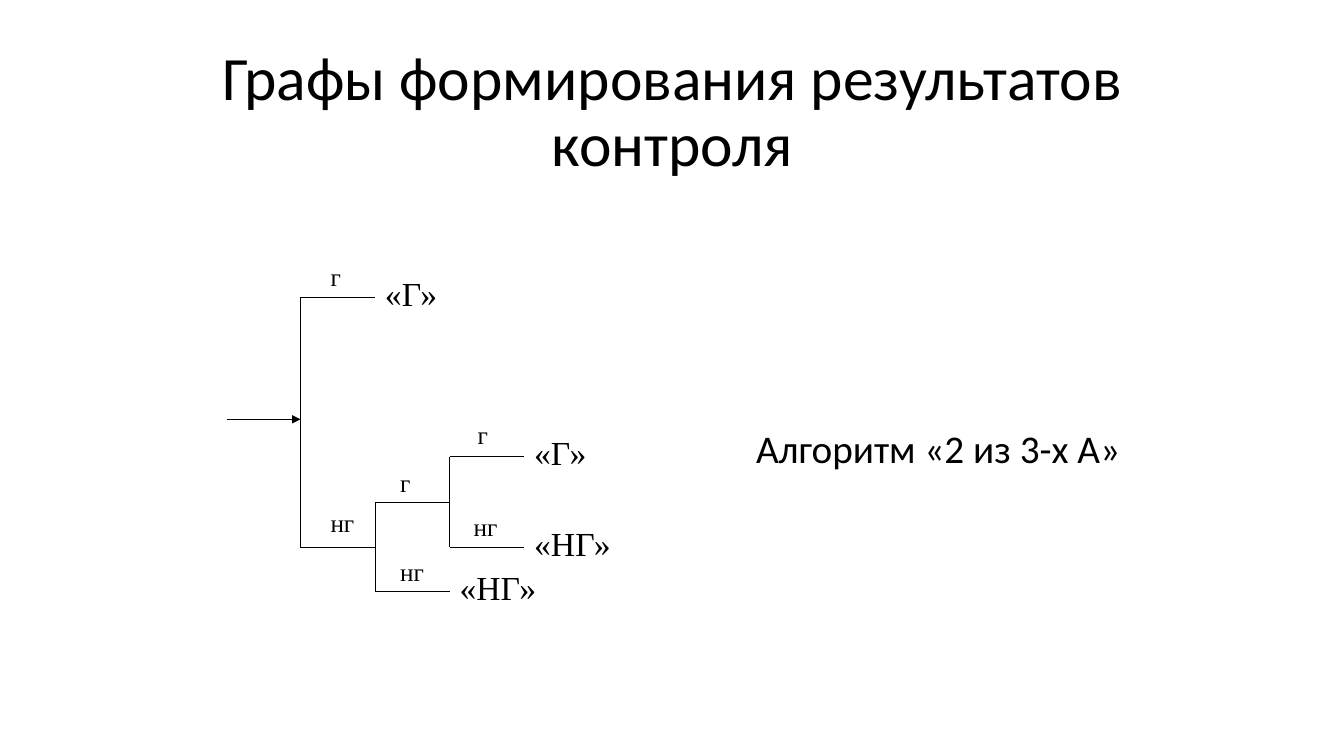
from dataclasses import dataclass

from pptx import Presentation
from pptx import util as u
from pptx.dml.color import RGBColor
from pptx.enum import shapes, text
from pptx.oxml import parse_xml
from pptx.oxml.ns import nsdecls, qn


@dataclass(frozen=True)
class Theme:
    ink: RGBColor = RGBColor(0, 0, 0)
    paper: RGBColor = RGBColor(255, 255, 255)
    sans: str = "Calibri"
    serif: str = "Times New Roman"
    title: int = 44
    note: int = 28
    leaf: int = 24
    mark: int = 18
    line: float = 0.5


THEME = Theme()
SCALE = 9144
STEP = 74
FORKS = [
    (298, 416, [(295, "г", 20, -41, "«Г»"), (543, "нг", 20, -45, "")]),
    (372, 543, [(498, "г", 15, -39, ""), (587, "нг", 15, -40, "«НГ»")]),
    (446, 498, [(453, "г", 18, -42, "«Г»"), (543, "нг", 14, -41, "«НГ»")]),
]


def px(n):
    return u.Emu(n * SCALE)


def style(par, size, face):
    par.font.size = u.Pt(size)
    par.font.name = face
    par.font.color.rgb = THEME.ink


def head(slide, words):
    title = slide.shapes.title
    title.left, title.top, title.width, title.height = map(px, (92, 40, 1150, 145))
    frame = title.text_frame
    frame.text = words
    frame.word_wrap = True
    frame.auto_size = text.MSO_AUTO_SIZE.NONE
    frame.vertical_anchor = text.MSO_ANCHOR.MIDDLE
    par = frame.paragraphs[0]
    par.alignment = text.PP_ALIGN.CENTER
    par.line_spacing = 0.9
    style(par, THEME.title, THEME.sans)


def label(slide, words, box, size, face):
    frame = slide.shapes.add_textbox(*map(px, box)).text_frame
    frame.text = words
    frame.word_wrap = True
    frame.auto_size = text.MSO_AUTO_SIZE.SHAPE_TO_FIT_TEXT
    style(frame.paragraphs[0], size, face)


def line(slide, start, end, arrow=False):
    link = slide.shapes.add_connector(
        shapes.MSO_CONNECTOR.STRAIGHT, *map(px, start + end))
    link.line.color.rgb = THEME.ink
    link.line.width = u.Pt(THEME.line)
    props = link._element.spPr
    if arrow:
        tip = parse_xml(f'<a:tailEnd {nsdecls("a")} type="triangle"/>')
        props.find(qn("a:ln")).append(tip)
    props.append(parse_xml(f'<a:effectLst {nsdecls("a")}/>'))


def fork(slide, x, root, arms):
    end = x + STEP
    for y, mark, dx, dy, leaf in arms:
        line(slide, (x, root), (x, y))
        line(slide, (x, y), (end, y))
        label(slide, mark, (x + dx, y + dy, 44, 40), THEME.mark, THEME.serif)
        if leaf:
            label(slide, leaf, (end, y - 29, 110, 50), THEME.leaf, THEME.serif)


def main():
    deck = Presentation()
    deck.slide_width, deck.slide_height = px(1333), px(750)
    slide = deck.slides.add_slide(deck.slide_layouts[5])
    slide.background.fill.solid()
    slide.background.fill.fore_color.rgb = THEME.paper
    head(slide, "Графы формирования результатов контроля")
    line(slide, (225, 416), (298, 416), arrow=True)
    for x, root, arms in FORKS:
        fork(slide, x, root, arms)
    label(slide, "Алгоритм «2 из 3-х А»", (740, 416, 505, 57),
          THEME.note, THEME.sans)
    deck.save("out.pptx")


if __name__ == "__main__":
    main()
